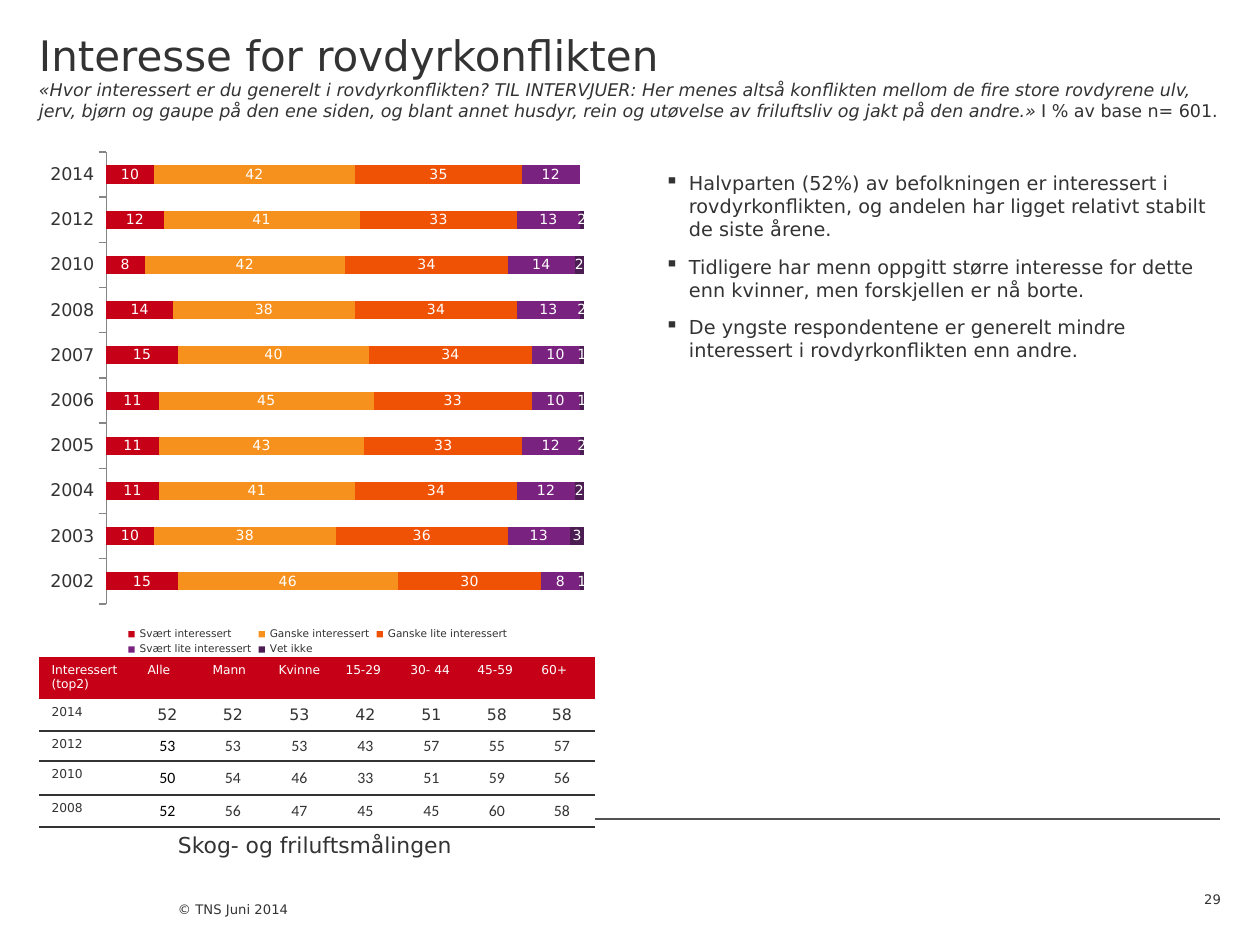
from dataclasses import dataclass
from typing import Any, Optional

from lxml import etree
from pptx import Presentation
from pptx.chart.data import CategoryChartData
from pptx.dml.color import RGBColor
from pptx.enum.chart import XL_CHART_TYPE, XL_LEGEND_POSITION, XL_TICK_LABEL_POSITION, XL_TICK_MARK
from pptx.enum.shapes import MSO_CONNECTOR
from pptx.enum.text import MSO_ANCHOR, PP_ALIGN
from pptx.oxml import parse_xml
from pptx.oxml.ns import nsdecls, qn
from pptx.util import Emu, Pt

STACKED = XL_CHART_TYPE.BAR_STACKED
LEGEND_BOTTOM = XL_LEGEND_POSITION.BOTTOM
TICK_OUT, TICK_NONE = XL_TICK_MARK.OUTSIDE, XL_TICK_MARK.NONE
LABELS_LOW = XL_TICK_LABEL_POSITION.LOW
STRAIGHT = MSO_CONNECTOR.STRAIGHT
TOP, MIDDLE, BOTTOM = MSO_ANCHOR.TOP, MSO_ANCHOR.MIDDLE, MSO_ANCHOR.BOTTOM
LEFT, CENTER, RIGHT = PP_ALIGN.LEFT, PP_ALIGN.CENTER, PP_ALIGN.RIGHT
NO_STYLE = "{2D5ABB26-0587-4C30-8999-92F81FD0307C}"


@dataclass(frozen=True)
class Theme:
    font: str = "DejaVu Sans"
    figures: str = "Calibri"
    text: str = "333333"
    black: str = "000000"
    white: str = "FFFFFF"
    red: str = "C50017"
    rule: str = "525252"
    axis: str = "868686"
    title: float = 24
    question: float = 10
    body: float = 11
    product: float = 12.5
    footer: float = 7.5
    axis_size: float = 10
    label: float = 8
    legend: float = 6
    head: float = 7
    cell: float = 9


T = Theme()


@dataclass(frozen=True)
class Box:
    x: int
    y: int
    w: int
    h: int


@dataclass(frozen=True)
class Series:
    name: str
    color: str
    values: tuple[Optional[int], ...]


YEARS = ("2014", "2012", "2010", "2008", "2007", "2006", "2005", "2004", "2003", "2002")
SERIES = (
    Series("Svært interessert", T.red, (10, 12, 8, 14, 15, 11, 11, 11, 10, 15)),
    Series("Ganske interessert", "F7911E", (42, 41, 42, 38, 40, 45, 43, 41, 38, 46)),
    Series("Ganske lite interessert", "EF5205", (35, 33, 34, 34, 34, 33, 33, 34, 36, 30)),
    Series("Svært lite interessert", "7A2280", (12, 13, 14, 13, 10, 10, 12, 12, 13, 8)),
    Series("Vet ikke", "4C1D52", (None, 2, 2, 2, 1, 1, 2, 2, 3, 1)),
)
ROWS = (
    ("Interessert\n(top2)", "Alle", "Mann", "Kvinne", "15-29", "30- 44", "45-59", "60+"),
    ("2014", "52", "52", "53", "42", "51", "58", "58"),
    ("2012", "53", "53", "53", "43", "57", "55", "57"),
    ("2010", "50", "54", "46", "33", "51", "59", "56"),
    ("2008", "52", "56", "47", "45", "45", "60", "58"),
)
COL_WIDTHS = (96, 65, 66, 67, 65, 67, 64, 66)
ROW_HEIGHTS = (40, 32, 30, 34, 32)
POINTS = (
    "Halvparten (52%) av befolkningen er interessert i rovdyrkonflikten, og andelen har ligget "
    "relativt stabilt de siste årene.",
    "Tidligere har menn oppgitt større interesse for dette enn kvinner, men forskjellen er nå borte.",
    "De yngste respondentene er generelt mindre interessert i rovdyrkonflikten enn andre.",
)
QUESTION = (
    "«Hvor interessert er du generelt i rovdyrkonflikten? TIL INTERVJUER: Her menes altså konflikten "
    "mellom de fire store rovdyrene ulv, jerv, bjørn og gaupe på den ene siden, og blant annet husdyr, "
    "rein og utøvelse av friluftsliv og jakt på den andre.» "
)


def px(n: int) -> Emu:
    return Emu(round(n * 914400 / 126))


def place(box: Box) -> tuple[Emu, ...]:
    return px(box.x), px(box.y), px(box.w), px(box.h)


def set_attrs(obj: Any, values: dict[str, Any]) -> None:
    for name, value in values.items():
        setattr(obj, name, value)


def style(font: Any, size: float, color: str = T.text, name: str = T.font, italic: bool = False) -> None:
    set_attrs(font, {"size": Pt(size), "name": name, "italic": italic})
    font.color.rgb = RGBColor.from_string(color)


def add_run(p: Any, text: str, size: float, **fmt: Any) -> None:
    r = p.add_run()
    r.text = text
    style(r.font, size, **fmt)


def add_box(s: Any, box: Box, top: int = 0, bottom: int = 0, anchor: Any = TOP) -> Any:
    tf = s.shapes.add_textbox(*place(box)).text_frame
    set_attrs(tf, {"word_wrap": True, "vertical_anchor": anchor, "margin_left": 0, "margin_right": 0,
                   "margin_top": px(top), "margin_bottom": px(bottom)})
    return tf


def add_rule(s: Any, x1: int, x2: int, y: int) -> None:
    line = s.shapes.add_connector(STRAIGHT, px(x1), px(y), px(x2), px(y))
    line.line.color.rgb = RGBColor.from_string(T.rule)
    line.line.width = Pt(0.75)
    etree.SubElement(line._element.spPr, qn("a:effectLst"))


def set_layout(element: Any, frame: Box, area: Box, inner: bool = False) -> None:
    """Place a chart part at an area given in slide px."""
    parts = {"xMode": "edge", "yMode": "edge", "x": round((area.x - frame.x) / frame.w, 3),
             "y": round((area.y - frame.y) / frame.h, 3), "w": round(area.w / frame.w, 3),
             "h": round(area.h / frame.h, 3)}
    if inner:
        parts = {"layoutTarget": "inner", **parts}
    body = "".join(f'<c:{k} val="{v}"/>' for k, v in parts.items())
    for old in element.findall(qn("c:layout")):
        element.remove(old)
    layout = parse_xml(f'<c:layout {nsdecls("c")}><c:manualLayout>{body}</c:manualLayout></c:layout>')
    if inner:
        element.insert(0, layout)
    else:
        element.find(qn("c:legendPos")).addnext(layout)


def add_interest_chart(s: Any, box: Box, plot_area: Box, legend_area: Box) -> None:
    data = CategoryChartData(number_format="0")
    data.categories = YEARS
    for item in SERIES:
        data.add_series(item.name, item.values)
    chart = s.shapes.add_chart(STACKED, *place(box), data).chart
    style(chart.font, T.axis_size)
    set_attrs(chart, {"has_title": False, "has_legend": True})
    set_attrs(chart.legend, {"position": LEGEND_BOTTOM, "include_in_layout": False})
    style(chart.legend.font, T.legend)
    set_attrs(chart.value_axis, {"visible": False, "has_major_gridlines": False,
                                 "minimum_scale": 0, "maximum_scale": 100})
    axis = chart.category_axis
    set_attrs(axis, {"reverse_order": True, "major_tick_mark": TICK_OUT, "minor_tick_mark": TICK_NONE,
                     "tick_label_position": LABELS_LOW})
    axis.format.line.color.rgb = RGBColor.from_string(T.axis)
    style(axis.tick_labels.font, T.axis_size)
    plot = chart.plots[0]
    set_attrs(plot, {"gap_width": 150, "overlap": 100, "vary_by_categories": False})
    for item, series in zip(SERIES, plot.series):
        series.format.fill.solid()
        series.format.fill.fore_color.rgb = RGBColor.from_string(item.color)
        series.data_labels.show_value = True
        style(series.data_labels.font, T.label, T.white)
    set_layout(chart._chartSpace.chart.plotArea, box, plot_area, inner=True)
    set_layout(chart.legend._element, box, legend_area)


def fill_cell(cell: Any, text: str, row: int, col: int) -> None:
    header, figure = row == 0, row > 0 and col > 0
    cell.fill.solid()
    cell.fill.fore_color.rgb = RGBColor.from_string(T.red if header else T.white)
    cell.vertical_anchor = MIDDLE if figure else TOP
    fmt: dict[str, Any] = {"size": T.cell if figure else T.head, "color": T.white if header else T.text}
    if figure and row > 1:
        fmt.update(name=T.figures, color=T.black if col == 1 else T.text)
        set_attrs(cell, {"margin_left": px(1), "margin_right": px(1), "margin_top": px(1), "margin_bottom": 0})
    cell.text = text
    for p in cell.text_frame.paragraphs:
        p.alignment = CENTER if figure else LEFT
        for r in p.runs:
            style(r.font, **fmt)
    if not header:
        border = parse_xml(f'<a:lnB {nsdecls("a")} w="12700"><a:solidFill><a:srgbClr val="{T.text}"/>'
                           "</a:solidFill></a:lnB>")
        cell._tc.get_or_add_tcPr().insert(0, border)


def add_group_table(s: Any, x: int, y: int) -> None:
    box = Box(x, y, sum(COL_WIDTHS), sum(ROW_HEIGHTS))
    table = s.shapes.add_table(len(ROWS), len(COL_WIDTHS), *place(box)).table
    set_attrs(table, {"first_row": False, "horz_banding": False})
    table._tbl.tblPr.find(qn("a:tableStyleId")).text = NO_STYLE
    for column, width in zip(table.columns, COL_WIDTHS):
        column.width = px(width)
    for i, (row, height) in enumerate(zip(ROWS, ROW_HEIGHTS)):
        table.rows[i].height = px(height)
        for j, text in enumerate(row):
            fill_cell(table.cell(i, j), text, i, j)


def add_bullets(tf: Any) -> None:
    for i, text in enumerate(POINTS):
        p = tf.add_paragraph() if i else tf.paragraphs[0]
        set_attrs(p, {"space_before": Pt(2.2 if i else 0), "space_after": Pt(6)})
        pPr = p._p.get_or_add_pPr()
        set_indent = {"marL": px(24), "indent": -px(24)}
        for name, value in set_indent.items():
            pPr.set(name, str(value))
        etree.SubElement(pPr, qn("a:buChar")).set("char", "▪")
        add_run(p, text, T.body)


def main() -> None:
    prs = Presentation()
    prs.slide_width, prs.slide_height = px(1260), px(945)
    s = prs.slides.add_slide(prs.slide_layouts[6])

    # Footer
    add_rule(s, 39, 1220, 819)
    add_run(add_box(s, Box(178, 832, 417, 53)).paragraphs[0], "Skog- og friluftsmålingen", T.product)
    tf = add_box(s, Box(178, 872, 350, 73), bottom=39, anchor=BOTTOM)
    add_run(tf.paragraphs[0], "© TNS Juni 2014", T.footer)

    # Chart
    add_interest_chart(s, Box(39, 142, 556, 521), Box(106, 152, 478, 452), Box(123, 625, 390, 34))

    # Title and question
    p = add_box(s, Box(39, 0, 1181, 142), top=29).paragraphs[0]
    add_run(p, "Interesse for rovdyrkonflikten", T.title)
    p.add_line_break()
    add_run(p, QUESTION, T.question, italic=True)
    add_run(p, "I % av base n= 601.", T.question)

    # Table and findings
    add_group_table(s, 39, 657)
    add_bullets(add_box(s, Box(665, 142, 556, 662), top=29))

    # Page number
    p = add_box(s, Box(1152, 872, 69, 35), anchor=BOTTOM).paragraphs[0]
    p.alignment = RIGHT
    add_run(p, "29", T.footer)

    prs.save("out.pptx")


if __name__ == "__main__":
    main()
